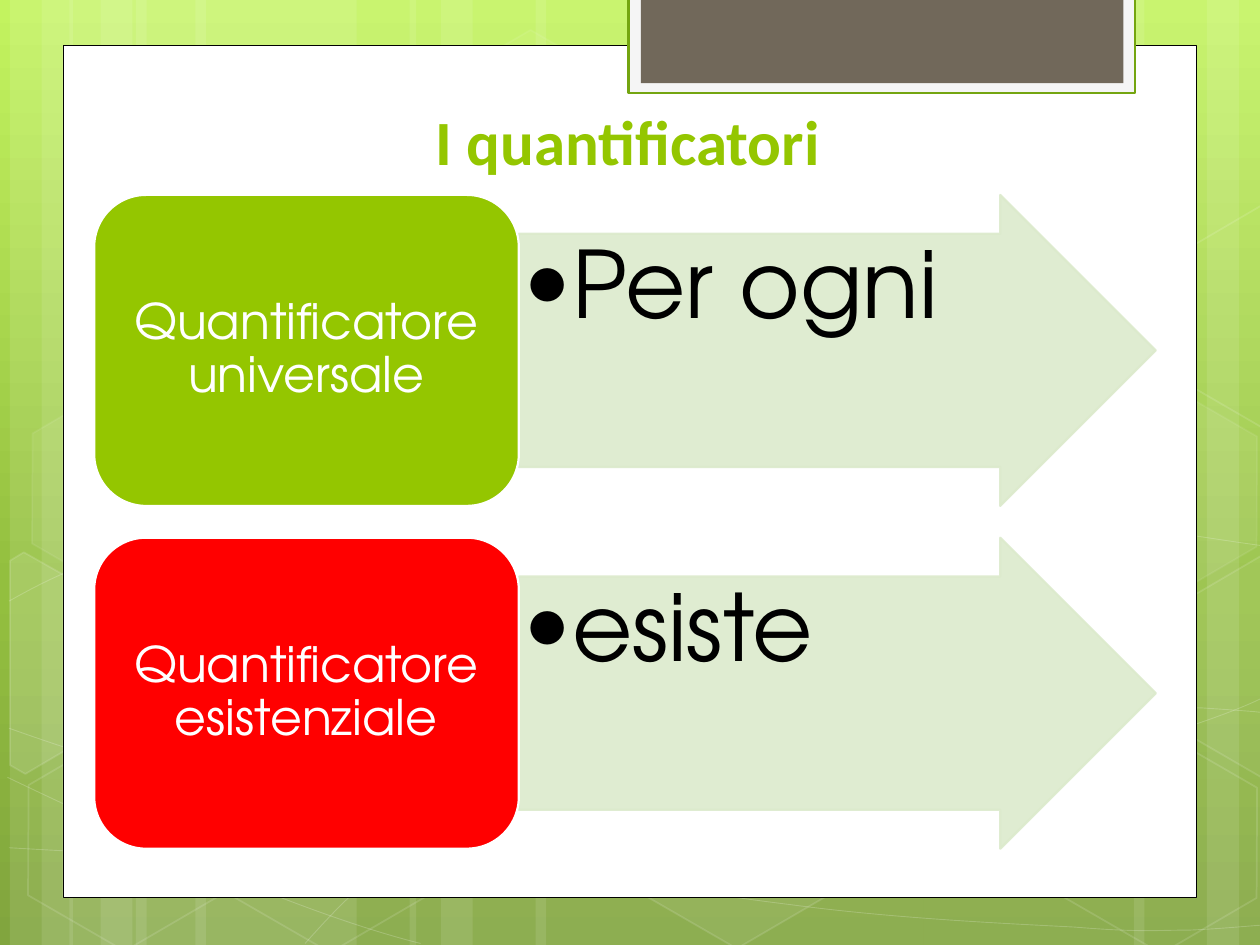
import copy
import math

import lxml.etree
import pptx
import pptx.dml.color
import pptx.enum.shapes
import pptx.enum.text
import pptx.oxml.ns
import pptx.util

Cm = pptx.util.Cm
Pt = pptx.util.Pt
SHAPE = pptx.enum.shapes.MSO_SHAPE
ANCHOR = pptx.enum.text.MSO_ANCHOR
ALIGN = pptx.enum.text.PP_ALIGN
qn = pptx.oxml.ns.qn

WHITE, BLACK, GREEN, RED = "FFFFFF", "000000", "94C600", "FF0000"
PALE_GREEN, DARK_GREEN, OFF_WHITE, BROWN = "DCEACC", "74A510", "F5F5F5", "71685A"

SLIDE_W, SLIDE_H = 25.4, 19.05
TILT = 30
BACKDROP = [(0, "C3F35F"), (0.62, "93BF3F"), (1, "81A53E")]

# Left edge and width of each vertical stripe, in cm
STRIPES = [
    (2.74, 4.45), (0.2, 1.27), (0.84, 2.12),
    (3.94, 4.45), (1.4, 1.27), (2.03, 2.12),
    (18.62, 4.45), (24.33, 1.27), (22.86, 2.12),
    (10.8, 7.82), (8.26, 1.27), (8.89, 2.12),
]

# Bézier chains: a start point, then two controls and an end per segment
WAVES = [
    [(0.18, 17.09), (1.55, 17.17), (2.92, 17.25), (4.83, 17.22), (6.73, 17.2),
     (9.09, 17.15), (11.63, 16.89), (14.17, 16.64), (17.78, 16.15), (20.12, 15.67),
     (22.43, 15.19), (24.82, 14.43), (25.58, 14)],
    [(0.18, 12.12), (0.91, 11.71), (1.65, 11.33), (3.07, 10.95), (4.52, 10.57),
     (6.58, 10.01), (8.81, 9.83), (11.07, 9.65), (13.82, 9.63), (16.61, 9.83),
     (19.41, 10.03), (24.05, 10.82), (25.58, 11.02)],
    [(0.15, 15.67), (3.07, 17.07), (6.27, 18.47), (8.48, 19.02)],
    [(0.18, 14.68), (0.97, 14.96), (1.78, 15.24), (3.25, 15.65), (4.72, 16.03),
     (6.93, 16.66), (9.07, 17.09), (11.18, 17.53), (13.84, 17.98), (15.95, 18.24),
     (18.06, 18.52), (20.32, 18.62), (21.67, 18.69), (22.99, 18.8), (23.34, 18.75),
     (24, 18.75), (24.66, 18.72), (25.12, 18.67), (25.58, 18.64)],
    [(6.15, 19.02), (6.6, 18.52), (7.06, 18.01), (7.67, 17.55), (8.28, 17.09),
     (9.14, 16.59), (9.86, 16.23), (10.57, 15.88), (11, 15.72), (11.94, 15.47),
     (12.85, 15.21), (14.55, 14.86), (15.44, 14.68), (16.36, 14.5), (16.48, 14.5),
     (17.27, 14.45), (18.06, 14.38), (19.3, 14.3), (20.17, 14.27), (21.06, 14.25),
     (22.5, 14.27), (22.5, 14.27), (22.5, 14.27), (24.21, 14.27), (24.21, 14.27),
     (24.66, 14.3), (25.1, 14.33), (25.32, 14.35), (25.55, 14.38), (25.48, 14.35),
     (25.55, 14.38)],
]

# Left, top, fill opacity (None is unfilled) and line opacity
HEXAGONS = [
    (8.48, 0.91, 4, 8), (12.62, 14.96, 6, 12), (0.28, 15.01, None, 12),
    (0.36, 7.92, 7, 8), (4.42, 15.04, None, 12), (19.13, 11.51, 10, 12),
    (21.18, 15.06, None, 12), (21.18, 7.98, 7, 8),
]

# Hexagons cut by the slide edge: corners as they appear, and the centre of the tilt
LEFT_CUT = [(0.2, 11.3), (0.48, 11.13), (2.44, 12.24), (2.41, 14.48), (0.51, 15.6), (0.2, 15.42)]
RIGHT_CUT = [(23.52, 12.32), (25.43, 11.2), (25.63, 11.33), (25.63, 15.57), (25.45, 15.67),
             (23.52, 14.55)]
UPPER_CUT = [(x, y - 7.06) for x, y in RIGHT_CUT]
CUT_HEXAGONS = [(LEFT_CUT, (0.91, 13.59), 10), (RIGHT_CUT, (25.02, 13.21), 4),
                (UPPER_CUT, (25.02, 6.15), None)]

QUANTIFIERS = [
    ("Quantificatore universale", GREEN, "Per ogni"),
    ("Quantificatore esistenziale", RED, "esiste"),
]


def rgb(color):
    return pptx.dml.color.RGBColor.from_string(color)


def upright(points, center):
    """Turn points back by the tilt around a centre."""
    cos, sin = math.cos(math.radians(TILT)), math.sin(math.radians(TILT))
    cx, cy = center
    return [(cx + (x - cx) * cos + (y - cy) * sin, cy - (x - cx) * sin + (y - cy) * cos)
            for x, y in points]


class SlideBuilder:
    heading_font = "Calibri"
    body_font = "TeX Gyre Adventor"

    def __init__(self, slide):
        self.slide = slide

    def background(self, stops):
        fill = self.slide.background.fill
        fill.gradient()
        fill.gradient_angle = 270
        stop_list = self.slide.element.xpath(".//a:gsLst")[0]
        stop_list.append(copy.deepcopy(stop_list[0]))
        for stop, (position, color) in zip(fill.gradient_stops, stops):
            stop.position = position
            stop.color.rgb = rgb(color)

    def paint(self, fill, color, opacity):
        if color is None or opacity is None:
            fill.background()
            return
        fill.solid()
        fill.fore_color.rgb = rgb(color)
        if opacity < 100:
            tint = fill._xPr.find(qn("a:solidFill"))[0]
            lxml.etree.SubElement(tint, qn("a:alpha"), val=str(opacity * 1000))

    def style(self, shape, fill, line, width, opacity, line_opacity):
        shape.shadow.inherit = False
        self.paint(shape.fill, fill, opacity)
        self.paint(shape.line.fill, line, line_opacity)
        if line:
            shape.line.width = Pt(width)
        return shape

    def shape(self, kind, box, fill=None, line=None, width=1.25, opacity=100, line_opacity=100):
        shape = self.slide.shapes.add_shape(kind, *(Cm(v) for v in box))
        return self.style(shape, fill, line, width, opacity, line_opacity)

    def outline(self, points, closed, width, opacity, line_opacity):
        corners = [(Cm(x), Cm(y)) for x, y in points]
        builder = self.slide.shapes.build_freeform(*corners[0])
        builder.add_line_segments(corners[1:], close=closed)
        return self.style(builder.convert_to_shape(), WHITE, WHITE, width, opacity, line_opacity)

    def wave(self, points):
        wave = self.outline(points, False, 0.5, None, 20)
        segments = wave._element.xpath(".//a:lnTo")
        for first in range(0, len(segments), 3):
            curve = lxml.etree.Element(qn("a:cubicBezTo"))
            segments[first].addprevious(curve)
            for segment in segments[first:first + 3]:
                curve.append(segment[0])
                segment.getparent().remove(segment)

    def text(self, shape, words, font, size, color, align, anchor, insets, bold=False):
        frame = shape.text_frame
        frame.text = words
        frame.word_wrap = True
        frame.auto_size = pptx.enum.text.MSO_AUTO_SIZE.NONE
        frame.vertical_anchor = anchor
        frame.margin_left = frame.margin_right = Cm(insets[0])
        frame.margin_top = frame.margin_bottom = Cm(insets[1])
        paragraph = frame.paragraphs[0]
        paragraph.alignment = align
        paragraph.line_spacing = 0.9
        run_font = paragraph.runs[0].font
        run_font.name, run_font.size, run_font.bold = font, Pt(size), bold
        run_font.color.rgb = rgb(color)
        return paragraph

    def text_box(self, box, *text_style):
        return self.text(self.slide.shapes.add_textbox(*(Cm(v) for v in box)), *text_style)

    def title(self, words, box):
        title = self.slide.shapes.title
        title.left, title.top, title.width, title.height = (Cm(v) for v in box)
        self.slide.shapes._spTree.append(title._element)  # in front of the panel
        self.text(title, words, self.heading_font, 36, GREEN, ALIGN.CENTER, ANCHOR.BOTTOM,
                  (0.25, 0.13), bold=True).line_spacing = 1.0

    def quantifier(self, name, color, reading, top):
        arrow = self.shape(SHAPE.RIGHT_ARROW, (10.46, top, 12.84, 6.27), PALE_GREEN, PALE_GREEN,
                           opacity=90, line_opacity=90)
        arrow.adjustments[0], arrow.adjustments[1] = 0.75, 0.5
        paragraph = self.text_box((10.46, top + 0.78, 10.49, 4.72), reading, self.body_font, 53,
                                  BLACK, ALIGN.LEFT, ANCHOR.TOP, (0.1, 0.1))
        properties = paragraph._p.get_or_add_pPr()
        properties.set("marL", str(Cm(0.79)))
        properties.set("indent", str(-Cm(0.79)))
        lxml.etree.SubElement(properties, qn("a:buFont"), typeface=self.body_font)
        lxml.etree.SubElement(properties, qn("a:buChar"), char="•")
        self.shape(SHAPE.ROUNDED_RECTANGLE, (1.9, top, 8.56, 6.27), color, WHITE)
        self.text_box((2.2, top + 0.3, 7.95, 5.66), name, self.body_font, 28, WHITE,
                      ALIGN.CENTER, ANCHOR.MIDDLE, (0.3, 0.15))


def main():
    deck = pptx.Presentation()
    deck.slide_width, deck.slide_height = Cm(SLIDE_W), Cm(SLIDE_H)
    page = SlideBuilder(deck.slides.add_slide(deck.slide_layouts[5]))

    # Backdrop: gradient, stripes, waves and hexagons
    page.background(BACKDROP)
    for left, width in STRIPES:
        page.shape(SHAPE.RECTANGLE, (left, 0, width, SLIDE_H), WHITE, opacity=10)
    for points in WAVES:
        page.wave(points)
    for left, top, opacity, line_opacity in HEXAGONS:
        hexagon = page.shape(SHAPE.HEXAGON, (left, top, 4.45, 3.86), WHITE, WHITE, 1,
                             opacity, line_opacity)
        hexagon.adjustments[0] = 0.285
        hexagon.rotation = TILT
    for corners, center, opacity in CUT_HEXAGONS:
        page.outline(upright(corners, center), True, 1, opacity, 12).rotation = TILT

    # White panel with the tab at its top
    page.shape(SHAPE.RECTANGLE, (1.27, 0.91, 22.86, 17.19), WHITE, BLACK, 0.5)
    page.shape(SHAPE.RECTANGLE, (12.67, -0.05, 10.21, 1.93), OFF_WHITE, DARK_GREEN)
    page.shape(SHAPE.RECTANGLE, (12.92, -0.05, 9.73, 1.73), BROWN)

    # Title and one row per quantifier
    page.title("I quantificatori", (2.9, 2.13, 19.51, 1.6))
    for row, (name, color, reading) in enumerate(QUANTIFIERS):
        page.quantifier(name, color, reading, 3.93 + 6.91 * row)

    deck.save("out.pptx")


if __name__ == "__main__":
    main()
